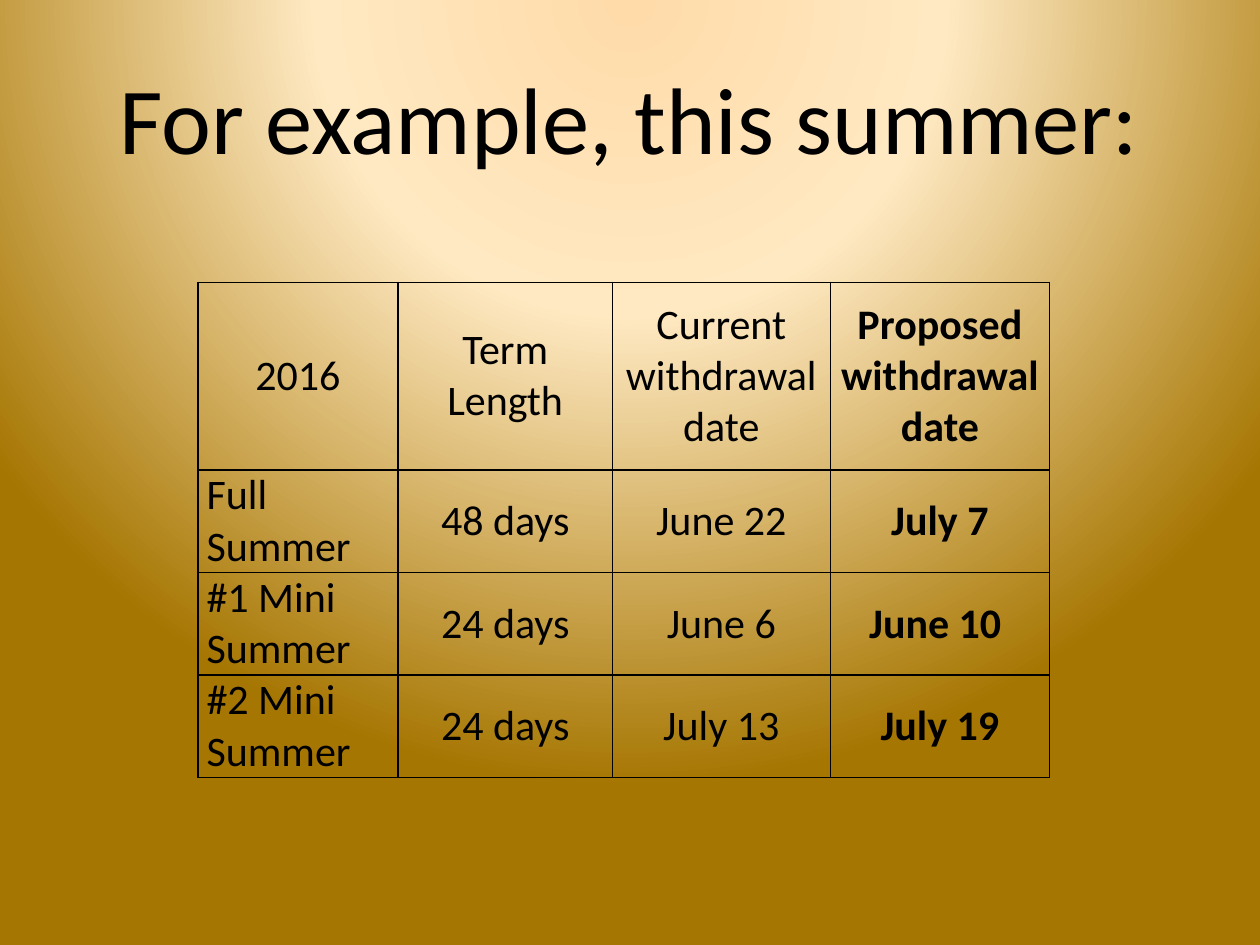
import pptx
import pptx.dml.color
import pptx.enum.text
import pptx.oxml
import pptx.oxml.ns
import pptx.util

Inches = pptx.util.Inches
ALIGN = pptx.enum.text.PP_ALIGN
MIDDLE = pptx.enum.text.MSO_ANCHOR.MIDDLE

BLACK = pptx.dml.color.RGBColor(0x00, 0x00, 0x00)
PEACH = pptx.dml.color.RGBColor(0xFF, 0xDB, 0xA9)
CREAM = pptx.dml.color.RGBColor(0xFF, 0xE9, 0xC2)
GOLD = pptx.dml.color.RGBColor(0xA6, 0x76, 0x02)
FONT = "Calibri"

GRADIENT_STOPS = [(0, PEACH), (40, CREAM), (100, GOLD)]
COLUMN_WIDTHS = [1.59, 1.7, 1.73, 1.74]
ROW_HEIGHTS = [1.49, 0.75, 0.75, 0.75]
WITHDRAWAL_DATES = [
    ["2016", "Term Length", "Current withdrawal\ndate", "Proposed withdrawal date"],
    ["Full Summer", "48 days", "June 22", "July 7"],
    ["#1 Mini Summer", "24 days", "June 6", "June 10 "],
    ["#2 Mini Summer", "24 days", "July 13", "July 19"],
]


def format_text(text_frame, size, alignment, bold=False):
    """Give every paragraph and run of a text frame the slide's type style."""
    for paragraph in text_frame.paragraphs:
        paragraph.alignment = alignment
        for run in paragraph.runs:
            run.font.name = FONT
            run.font.size = pptx.util.Pt(size)
            run.font.bold = bold
            run.font.color.rgb = BLACK


def paint_background(slide):
    """Fill the slide with a circular gradient centred above its top edge."""
    slide.background.fill.gradient()
    gradient = next(slide.element.iter(pptx.oxml.ns.qn("a:gradFill")))
    stops = "".join(
        f'<a:gs pos="{position * 1000}"><a:srgbClr val="{color}"/></a:gs>'
        for position, color in GRADIENT_STOPS
    )
    circle = pptx.oxml.parse_xml(
        f'<a:gradFill {pptx.oxml.ns.nsdecls("a")} rotWithShape="1">'
        f"<a:gsLst>{stops}</a:gsLst>"
        '<a:path path="circle">'
        '<a:fillToRect l="50000" t="-80000" r="50000" b="180000"/>'
        "</a:path></a:gradFill>"
    )
    gradient.getparent().replace(gradient, circle)


def place_title(slide, left, top, width, height):
    """Place and format the title placeholder in the given box."""
    title = slide.shapes.title
    title.left, title.top, title.width, title.height = left, top, width, height
    title.text_frame.text = "For example, this summer:"
    title.text_frame.vertical_anchor = MIDDLE
    format_text(title.text_frame, 54, ALIGN.CENTER)


def outline_cell(cell):
    """Draw a thin black line on each side of a cell."""
    properties = cell._tc.get_or_add_tcPr()
    for side in ("lnL", "lnR", "lnT", "lnB"):
        properties.append(pptx.oxml.parse_xml(
            f'<a:{side} {pptx.oxml.ns.nsdecls("a")} w="{pptx.util.Pt(1)}">'
            f'<a:solidFill><a:srgbClr val="{BLACK}"/></a:solidFill></a:{side}>'
        ))


def place_table(slide, left, top, width, height):
    """Place the table of withdrawal dates in the given box."""
    table = slide.shapes.add_table(
        len(ROW_HEIGHTS), len(COLUMN_WIDTHS), left, top, width, height
    ).table
    table.first_row = table.horz_banding = False
    for column, column_width in zip(table.columns, COLUMN_WIDTHS):
        column.width = Inches(column_width)
    for row, row_height in zip(table.rows, ROW_HEIGHTS):
        row.height = Inches(row_height)
    last_column = len(COLUMN_WIDTHS) - 1
    for row_index, texts in enumerate(WITHDRAWAL_DATES):
        for column_index, text in enumerate(texts):
            cell = table.cell(row_index, column_index)
            cell.text_frame.text = text
            cell.vertical_anchor = MIDDLE
            cell.margin_left = cell.margin_right = Inches(0.07)
            cell.margin_top = cell.margin_bottom = 0
            outline_cell(cell)
            cell.fill.background()
            is_term_name = row_index > 0 and column_index == 0
            alignment = ALIGN.LEFT if is_term_name else ALIGN.CENTER
            format_text(cell.text_frame, 24, alignment, column_index == last_column)


def main():
    """Build the slide and save the presentation."""
    presentation = pptx.Presentation()
    presentation.slide_width = Inches(10)
    presentation.slide_height = Inches(7.5)
    slide = presentation.slides.add_slide(presentation.slide_layouts[5])
    paint_background(slide)
    place_title(slide, Inches(0.62), Inches(0.3), Inches(8.75), Inches(1.25))
    place_table(slide, Inches(1.57), Inches(2.24), Inches(6.75), Inches(3.89))
    presentation.save("out.pptx")


if __name__ == "__main__":
    main()
